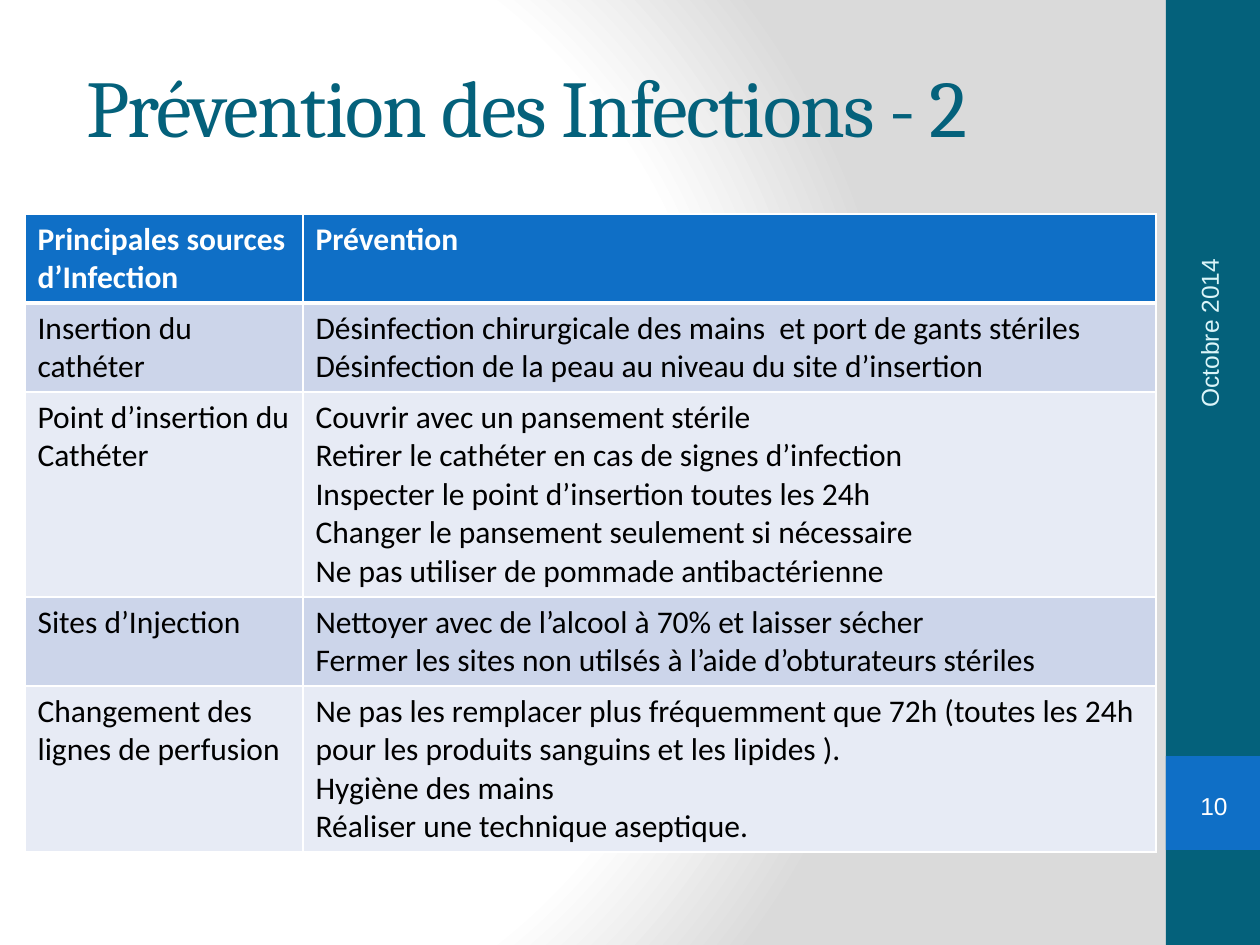
import lxml.etree
import pptx
import pptx.dml.color
import pptx.enum.shapes
import pptx.enum.text
import pptx.oxml
import pptx.oxml.ns
import pptx.util

SCALE = 914400 / 126
COLORS = {
    "teal": "04617B", "blue": "0F6FC6", "white": "FFFFFF", "gray": "DADADA",
    "black": "000000", "dark": "CCD5EA", "light": "E7EBF5", "ice": "DBF5F9",
}
ROWS = [
    ("Principales sources d’Infection", ["Prévention"]),
    ("Insertion du cathéter", [
        "Désinfection chirurgicale des mains  et port de gants stériles",
        "Désinfection de la peau au niveau du site d’insertion"]),
    ("Point d’insertion du Cathéter", [
        "Couvrir avec un pansement stérile",
        "Retirer le cathéter en cas de signes d’infection",
        "Inspecter le point d’insertion toutes les 24h",
        "Changer le pansement seulement si nécessaire",
        "Ne pas utiliser de pommade antibactérienne"]),
    ("Sites d’Injection", [
        "Nettoyer avec de l’alcool à 70% et laisser sécher",
        "Fermer les sites non utilsés à l’aide d’obturateurs stériles"]),
    ("Changement des lignes de perfusion", [
        "Ne pas les remplacer plus fréquemment que 72h (toutes les 24h "
        "pour les produits sanguins et les lipides ).",
        "Hygiène des mains",
        "Réaliser une technique aseptique."]),
]
COLS = [278, 853]
HEIGHTS = [89, 89, 205, 89, 166]


def px(num):
    """Turn px into EMU."""
    return pptx.util.Emu(round(num * SCALE))


def rgb(name):
    """Look up a colour by name."""
    return pptx.dml.color.RGBColor.from_string(COLORS[name])


def style(font, face, size, color, bold=False):
    """Set face, size, colour and weight of a font."""
    font.name = face
    font.size = pptx.util.Pt(size)
    font.color.rgb = rgb(color)
    font.bold = bold


def write(frame, lines, face, size, color, bold=False):
    """Fill a text frame with one paragraph per line."""
    frame.text = "\n".join(lines)
    frame.word_wrap = True
    for para in frame.paragraphs:
        style(para.font, face, size, color, bold)


def paint(slide):
    """Give the slide its round gradient ground."""
    slide.background.fill.gradient()
    grad = slide.element.find(".//" + pptx.oxml.ns.qn("a:gradFill"))
    stops = "".join(
        f'<a:gs pos="{pos * 1000}"><a:srgbClr val="{COLORS[name]}"/></a:gs>'
        for pos, name in [(0, "white"), (75, "white"), (100, "gray")])
    fresh = pptx.oxml.parse_xml(
        f'<a:gradFill {pptx.oxml.ns.nsdecls("a")} rotWithShape="1">'
        f'<a:gsLst>{stops}</a:gsLst><a:path path="circle">'
        '<a:fillToRect l="20000" t="50000" r="100000" b="50000"/>'
        '</a:path></a:gradFill>')
    grad.getparent().replace(grad, fresh)


def block(slide, box, color):
    """Draw a plain filled rectangle."""
    kind = pptx.enum.shapes.MSO_SHAPE.RECTANGLE
    shape = slide.shapes.add_shape(kind, *map(px, box))
    shape.shadow.inherit = False
    shape.fill.solid()
    shape.fill.fore_color.rgb = rgb(color)
    shape.line.fill.background()


def label(slide, box, text, face, size, color):
    """Place a text box centred in height."""
    area = slide.shapes.add_textbox(*map(px, box))
    write(area.text_frame, [text], face, size, color)
    area.text_frame.vertical_anchor = pptx.enum.text.MSO_ANCHOR.MIDDLE
    return area


def title(slide, box):
    """Place the heading with tight letters."""
    area = label(slide, box, "Prévention des Infections - 2",
                 "Cambria", 46, "teal")
    run = area.text_frame.paragraphs[0].runs[0]
    run.font.element.set("spc", "-100") if hasattr(run.font, "element") else \
        run._r.get_or_add_rPr().set("spc", "-100")


def side(slide, box):
    """Draw the side bar with date and page number."""
    left, top, wide, high = box
    block(slide, box, "teal")
    block(slide, (left, top + 756, wide, wide), "blue")
    date = label(slide, (left - 125, top + 227, 336, 50),
                 "Octobre 2014", "Arial", 14, "ice")
    date.rotation = 270
    kind = pptx.enum.shapes.MSO_SHAPE.DOUBLE_BRACKET
    page = slide.shapes.add_shape(
        kind, *map(px, (left + 10, top + 779, 76, 54)))
    page.adjustments[0] = 0.18
    page.shadow.inherit = False
    page.fill.background()
    page.line.fill.background()
    frame = page.text_frame
    write(frame, ["10"], "Arial", 14, "white")
    frame.margin_left = frame.margin_right = 0
    frame.margin_top = frame.margin_bottom = 0
    frame.vertical_anchor = pptx.enum.text.MSO_ANCHOR.MIDDLE
    frame.paragraphs[0].alignment = pptx.enum.text.PP_ALIGN.CENTER


def edge(cell, widths):
    """Draw white cell borders from widths in points by side."""
    props = cell._tc.get_or_add_tcPr()
    for spot, (name, width) in enumerate(widths.items()):
        line = pptx.oxml.parse_xml(
            f'<a:ln{name} {pptx.oxml.ns.nsdecls("a")} w="{width * 12700}">'
            f'<a:solidFill><a:srgbClr val="{COLORS["white"]}"/></a:solidFill>'
            f'</a:ln{name}>')
        props.insert(spot, line)


def grid(slide, box):
    """Build the table of infection sources and prevention."""
    table = slide.shapes.add_table(
        len(ROWS), len(COLS), *map(px, box)).table
    for col, wide in zip(table.columns, COLS):
        col.width = px(wide)
    for row, (source, advice) in enumerate(ROWS):
        table.rows[row].height = px(HEIGHTS[row])
        head = row == 0
        fill = "blue" if head else "dark" if row % 2 else "light"
        for col, lines in enumerate([[source], advice]):
            cell = table.cell(row, col)
            write(cell.text_frame, lines, "Calibri", 18,
                  "white" if head else "black", head)
            cell.fill.solid()
            cell.fill.fore_color.rgb = rgb(fill)
            edge(cell, {"L": 1, "R": 1, "T": 3 if row == 1 else 1,
                        "B": 3 if head else 1})


def main():
    """Build and save the slide."""
    deck = pptx.Presentation()
    deck.slide_width, deck.slide_height = px(1260), px(945)
    slide = deck.slides.add_slide(deck.slide_layouts[6])
    paint(slide)
    title(slide, (74, 26, 1050, 158))
    grid(slide, (25, 214, sum(COLS), sum(HEIGHTS)))
    side(slide, (1166, 0, 94, 945))
    deck.save("out.pptx")


if __name__ == "__main__":
    main()
